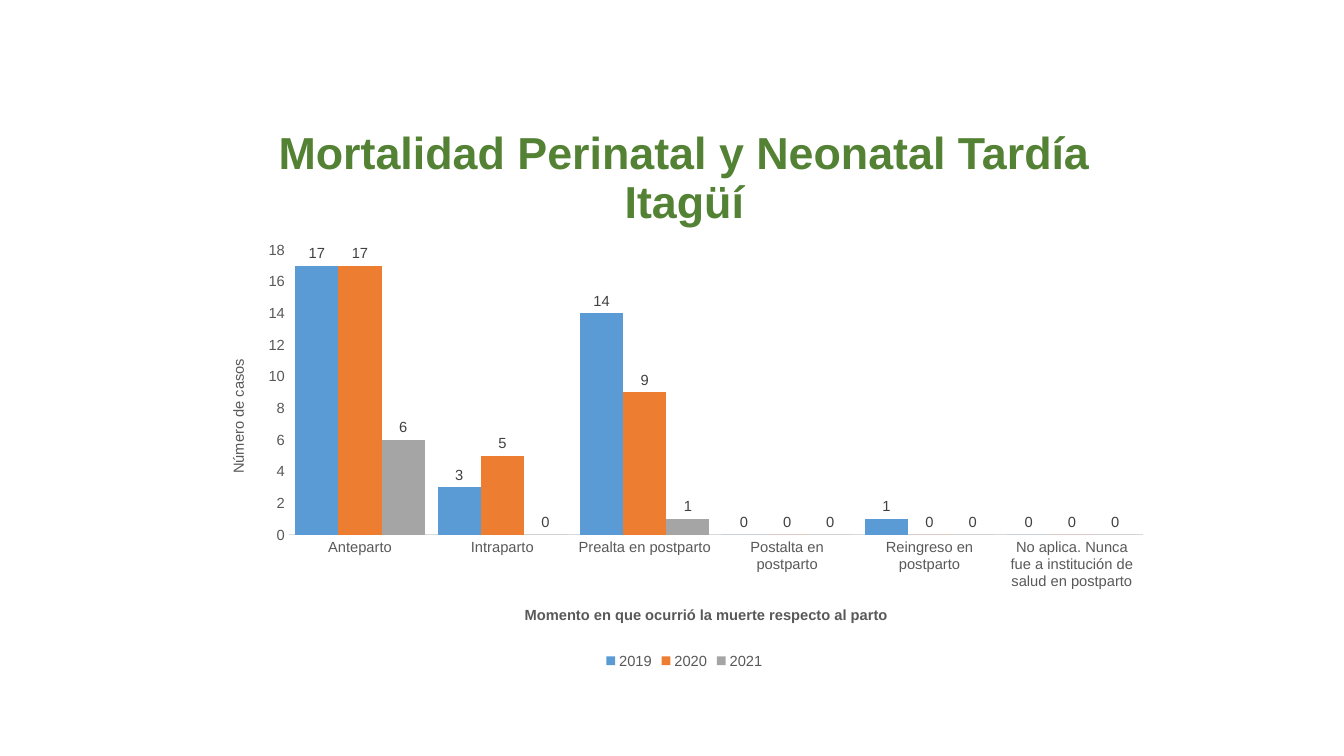
from pptx import Presentation
from pptx.chart.data import CategoryChartData
from pptx.dml.color import RGBColor
from pptx.enum.chart import XL_CHART_TYPE as ChartType
from pptx.enum.chart import XL_LABEL_POSITION as LabelPosition
from pptx.enum.chart import XL_LEGEND_POSITION as LegendPosition
from pptx.enum.chart import XL_TICK_MARK as TickMark
from pptx.enum.text import MSO_ANCHOR as Anchor
from pptx.enum.text import PP_ALIGN as Align
from pptx.oxml.ns import qn
from pptx.oxml import parse_xml
from pptx.util import Pt

FONT = "Arial"
GREY = "595959"
CHART_NS = "http://schemas.openxmlformats.org/drawingml/2006/chart"
MOMENTS = [
    "Anteparto",
    "Intraparto",
    "Prealta en postparto",
    "Postalta en postparto",
    "Reingreso en postparto",
    "No aplica. Nunca fue a institución de salud en postparto",
]
YEARS = [
    ("2019", [17, 3, 14, 0, 1, 0], "5B9BD5"),
    ("2020", [17, 5, 9, 0, 0, 0], "ED7D31"),
    ("2021", [6, 0, 1, 0, 0, 0], "A5A5A5"),
]


def colour(value):
    return RGBColor.from_string(value)


def style_font(font, size, value, bold=False):
    font.name = FONT
    font.size = Pt(size)
    font.bold = bold
    font.color.rgb = colour(value)


def set_layout(element, index, target=None, **fractions):
    old = element.find(qn("c:layout"))
    if old is not None:
        element.remove(old)
    parts = [("layoutTarget", target)] if target else []
    parts += [(f"{key}Mode", "edge") for key in ("x", "y")]
    parts += list(fractions.items())
    inner = "".join(f'<c:{tag} val="{value}"/>' for tag, value in parts)
    element.insert(index, parse_xml(
        f'<c:layout xmlns:c="{CHART_NS}"><c:manualLayout>{inner}'
        "</c:manualLayout></c:layout>"))


def add_title(slide, lines):
    title = slide.shapes.title
    title.left, title.top, title.width, title.height = (
        Pt(111.6), Pt(94.3), Pt(754.6), Pt(72))
    frame = title.text_frame
    frame.word_wrap = True
    frame.vertical_anchor = Anchor.BOTTOM
    para = frame.paragraphs[0]
    para.alignment = Align.CENTER
    para.line_spacing = 0.9
    for number, line in enumerate(lines):
        if number:
            para.add_line_break()
        span = para.add_run()
        span.text = line
        style_font(span.font, 32, "548235", True)


def style_axis(axis, text, bold, x, y):
    axis.has_major_gridlines = False
    axis.major_tick_mark = TickMark.NONE
    axis.minor_tick_mark = TickMark.NONE
    style_font(axis.tick_labels.font, 10.5, GREY)
    axis.has_title = True
    span = axis.axis_title.text_frame.paragraphs[0].add_run()
    span.text = text
    style_font(span.font, 10.5, GREY, bold)
    set_layout(axis.axis_title._element, 1, x=x, y=y)


def style_series(series, fill):
    series.format.fill.solid()
    series.format.fill.fore_color.rgb = colour(fill)
    series.invert_if_negative = False
    labels = series.data_labels
    labels.show_value = True
    labels.position = LabelPosition.OUTSIDE_END
    style_font(labels.font, 10.5, "404040")


def add_cases_chart(slide):
    data = CategoryChartData()
    data.categories = MOMENTS
    for year, cases, _ in YEARS:
        data.add_series(year, cases)
    chart = slide.shapes.add_chart(
        ChartType.COLUMN_CLUSTERED,
        Pt(147.6), Pt(166.3), Pt(682.6), Pt(314.6), data).chart
    style_font(chart.font, 10.5, "000000")
    chart.has_title = False
    chart.has_legend = True
    chart.legend.position = LegendPosition.BOTTOM
    chart.legend.include_in_layout = False
    style_font(chart.legend.font, 10.5, GREY)

    plot = chart.plots[0]
    plot.gap_width = 30
    plot.overlap = 0
    plot.vary_by_categories = False
    for series, (_, _, fill) in zip(plot.series, YEARS):
        style_series(series, fill)

    moments, cases = chart.category_axis, chart.value_axis
    style_axis(moments, "Momento en que ocurrió la muerte respecto al parto",
               True, 0.33, 0.84)
    moments.format.line.color.rgb = colour("D9D9D9")
    moments.format.line.width = Pt(0.75)
    style_axis(cases, "Número de casos", False, 0.02, 0.28)
    cases.axis_title.text_frame._txBody.bodyPr.set("rot", "-5400000")
    cases.format.line.fill.background()
    cases.minimum_scale, cases.maximum_scale, cases.major_unit = 0, 18, 2
    plot_area = chart._chartSpace.find(".//" + qn("c:plotArea"))
    set_layout(plot_area, 0, "inner", x=0.086, y=0.039, w=0.894, h=0.647)


def main():
    deck = Presentation()
    deck.slide_width, deck.slide_height = Pt(960), Pt(540)
    page = deck.slides.add_slide(deck.slide_layouts[5])
    add_title(page, ["Mortalidad Perinatal y Neonatal Tardía", "Itagüí"])
    add_cases_chart(page)
    deck.save("out.pptx")


if __name__ == "__main__":
    main()
